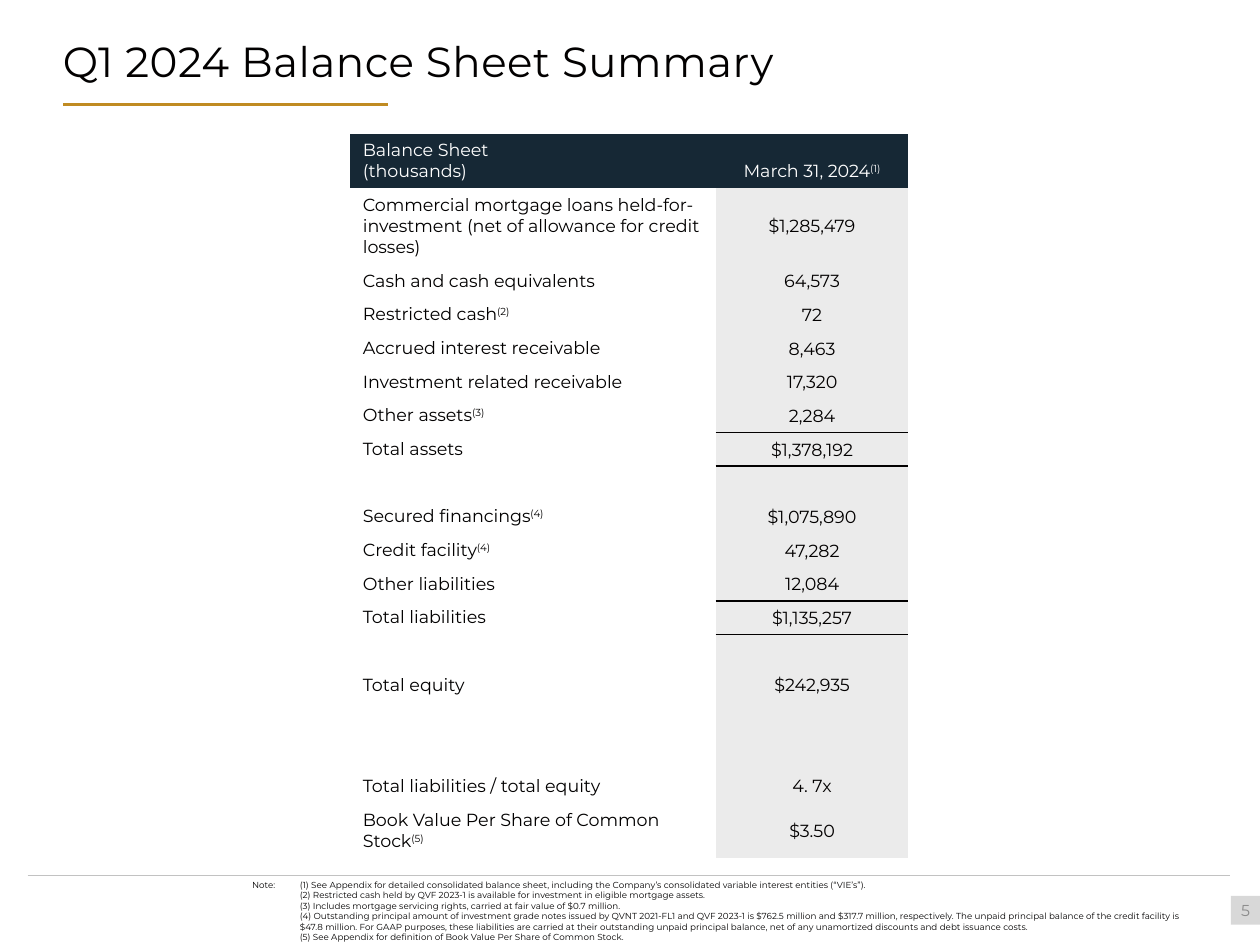
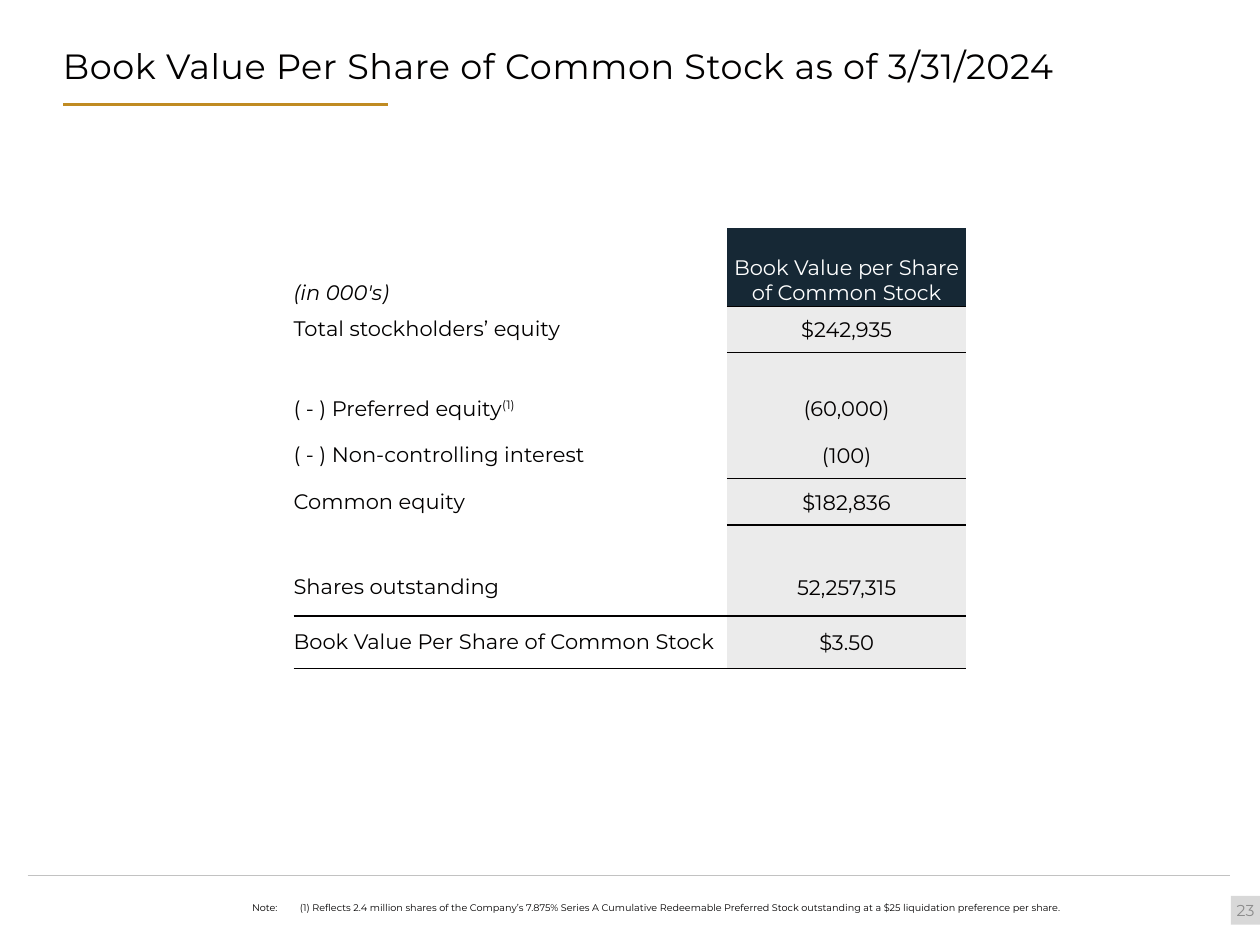
from lxml import etree
from pptx import Presentation
from pptx import util as u
from pptx.dml.color import RGBColor
from pptx.enum import shapes, text
from pptx.oxml.ns import qn

# Shared look
FONT = "Montserrat"
INK, WHITE, NAVY, PALE = "020000", "FFFFFF", "162835", "EBEBEB"
GOLD, RULE, BADGE, GREY = "C08B22", "C2C2C2", "D8D8D8", "8C8C8C"
NO_STYLE = "{2D5ABB26-0587-4C30-8999-92F81FD0307C}"
WIDE, HIGH = 10, 7.5
TOP, MID, LOW = (text.MSO_ANCHOR.TOP, text.MSO_ANCHOR.MIDDLE,
                 text.MSO_ANCHOR.BOTTOM)
FLUSH, SNUG, ROOMY = (0, 0, 0, 0), (.01, .01, .01, 0), (.1, .05, .1, .05)

# Content: ^ starts a raised note mark; a row is label, value, ruled columns
# (0 none, 1 value only, 2 both), and height
SHEET = [
    ("Balance Sheet\n(thousands)", "March 31, 2024^(1)", 0, .36),
    ("Commercial mortgage loans held-for-investment (net of allowance "
     "for credit losses)", "$1,285,479", 0, .51),
    ("Cash and cash equivalents", "64,573", 0, .22),
    ("Restricted cash^(2)", "72", 0, .22),
    ("Accrued interest receivable", "8,463", 0, .22),
    ("Investment related receivable", "17,320", 0, .22),
    ("Other assets^(3)", "2,284", 1, .22),
    ("Total assets", "$1,378,192", 0, .22),
    ("", "", 0, .22),
    ("Secured financings^(4)", "$1,075,890", 0, .22),
    ("Credit facility^(4)", "47,282", 0, .22),
    ("Other liabilities", "12,084", 1, .22),
    ("Total liabilities", "$1,135,257", 0, .22),
    ("", "", 0, .22),
    ("Total equity", "$242,935", 0, .22),
    ("", "", 0, .22),
    ("", "", 0, .22),
    ("Total liabilities / total equity", "4. 7x", 0, .22),
    ("Book Value Per Share of Common Stock^(5)", "$3.50", 0, .36),
]
BOOK = [
    ("(in 000's)", "Book Value per Share of Common Stock", 1, .62),
    ("Total stockholders’ equity", "$242,935", 0, .37),
    ("", "", 0, .26),
    ("( - ) Preferred equity^(1)", "(60,000)", 0, .37),
    ("( - ) Non-controlling interest", "(100)", 1, .37),
    ("Common equity", "$182,836", 0, .37),
    ("", "", 0, .26),
    ("Shares outstanding", "52,257,315", 2, .46),
    ("Book Value Per Share of Common Stock", "$3.50", 2, .42),
]
SLIDES = [
    dict(title="Q1 2024 Balance Sheet Summary", size=24, page="5",
         rows=SHEET, at=(2.78, 1.06), cols=(2.9, 1.53), pt=10,
         pad=ROOMY, anchor=TOP, band=True, note_top=6.98, note_pt=5,
         notes=[
             "(1) See Appendix for detailed consolidated balance sheet, "
             "including the Company’s consolidated variable interest "
             "entities (“VIE’s”).",
             "(2) Restricted cash held by QVF 2023-1 is available for "
             "investment in eligible mortgage assets.",
             "(3) Includes mortgage servicing rights, carried at fair value "
             "of $0.7 million.",
             "(4) Outstanding principal amount of investment grade notes "
             "issued by QVNT 2021-FL1 and QVF 2023-1 is $762.5 million and "
             "$317.7 million, respectively. The unpaid principal balance of "
             "the credit facility is $47.8 million. For GAAP purposes, these "
             "liabilities are carried at their outstanding unpaid principal "
             "balance, net of any unamortized discounts and debt issuance "
             "costs.",
             "(5) See Appendix for definition of Book Value Per Share of "
             "Common Stock."]),
    dict(title="Book Value Per Share of Common Stock as of 3/31/2024",
         size=20, page="23", rows=BOOK, at=(2.33, 1.81), cols=(3.44, 1.9),
         pt=12, pad=FLUSH, anchor=MID, band=False, note_top=7.16,
         note_pt=5.5, notes=[
             "(1) Reflects 2.4 million shares of the Company’s 7.875% "
             "Series A Cumulative Redeemable Preferred Stock outstanding at "
             "a $25 liquidation preference per share."]),
]


def tint(code):
    return RGBColor.from_string(code)


def sub(node, tag, **attrs):
    return etree.SubElement(node, qn(tag), attrs)


def style(para, pt, color, center=False):
    para.font.name, para.font.size = FONT, u.Pt(pt)
    para.font.color.rgb = tint(color)
    if center:
        para.alignment = text.PP_ALIGN.CENTER


def inset(item, pad):
    (item.margin_left, item.margin_top,
     item.margin_right, item.margin_bottom) = map(u.Inches, pad)


def box(slide, left, top, width, height, pad):
    frame = slide.shapes.add_textbox(
        *map(u.Inches, (left, top, width, height))).text_frame
    frame.word_wrap = True
    inset(frame, pad)
    return frame


def line(slide, left, right, y, color, pt):
    rule = slide.shapes.add_connector(
        shapes.MSO_CONNECTOR.STRAIGHT,
        *map(u.Inches, (left, y, right, y)))
    rule.line.color.rgb, rule.line.width = tint(color), u.Pt(pt)
    sub(rule._element.spPr, "a:effectLst")


def frame_up(slide, data):
    """Rules, title and page badge."""
    line(slide, .22, 9.76, 6.95, RULE, .5)
    line(slide, .5, 3.08, .83, GOLD, 1.5)
    para = box(slide, .5, .22, 9.27, .6, (0, .05, .1, .05)).paragraphs[0]
    run = para.add_run()
    run.text = data["title"]
    run._r.get_or_add_rPr().set("spc", "30")
    para.line_spacing = u.Pt(30)
    style(para, data["size"], INK)

    side = .23
    badge = slide.shapes.add_shape(
        shapes.MSO_SHAPE.RECTANGLE,
        *map(u.Inches, (WIDE - side, 7.11, side, side)))
    badge.shadow.inherit = False
    badge.fill.solid()
    badge.fill.fore_color.rgb = tint(BADGE)
    badge.line.fill.background()
    frame = badge.text_frame
    inset(frame, FLUSH)
    frame.word_wrap, frame.vertical_anchor = False, MID
    frame.text = data["page"]
    style(frame.paragraphs[0], 9, GREY, True)


def fill_cell(cell, words, pt, color, back, center):
    if back:
        cell.fill.solid()
        cell.fill.fore_color.rgb = tint(back)
    else:
        cell.fill.background()
    frame = cell.text_frame
    for i, part in enumerate(words.split("\n")):
        para = frame.add_paragraph() if i else frame.paragraphs[0]
        main, _, mark = part.partition("^")
        if main:
            para.add_run().text = main
        else:
            sub(para._p, "a:endParaRPr", sz=str(pt * 100))
        if mark:
            run = para.add_run()
            run.text = mark
            run._r.get_or_add_rPr().set("baseline", "30000")
        style(para, pt, color, center)


def edge(cell, side, pt):
    props = cell._tc.get_or_add_tcPr()
    node = sub(props, "a:ln" + side, w=str(u.Pt(pt)))
    sub(sub(node, "a:solidFill"), "a:srgbClr", val=INK)
    props.insert(0, node)


def grid(slide, data):
    rows, cols, pt = data["rows"], data["cols"], data["pt"]
    size = (sum(cols), sum(row[3] for row in rows))
    table = slide.shapes.add_table(
        len(rows), len(cols), *map(u.Inches, data["at"] + size)).table
    table.first_row = table.horz_banding = False
    table._tbl.tblPr.find(qn("a:tableStyleId")).text = NO_STYLE
    for col, width in zip(table.columns, cols):
        col.width = u.Inches(width)
    for r, (label, value, _, height) in enumerate(rows):
        table.rows[r].height = u.Inches(height)
        left, right = table.cell(r, 0), table.cell(r, 1)
        head = r == 0
        band = head and data["band"]
        fill_cell(left, label, pt, WHITE if band else INK,
                  NAVY if band else None, False)
        fill_cell(right, value, pt, WHITE if head else INK,
                  NAVY if head else PALE, True)
        inset(left, data["pad"])
        inset(right, data["pad"] if head else SNUG)
        left.vertical_anchor = LOW if head else data["anchor"]
        right.vertical_anchor = LOW if head else MID
        if head and not data["band"]:
            left.text_frame.paragraphs[0].font.italic = True

    # Bottom up, so that top edges come before bottom edges in each cell
    for r in reversed(range(len(rows))):
        for c in range(len(cols) - rows[r][2], len(cols)):
            pt = 1 if r else .5
            edge(table.cell(r, c), "B", pt)
            if r + 1 < len(rows):
                edge(table.cell(r + 1, c), "T", pt)


def notes(slide, data):
    frame = box(slide, 2, data["note_top"], 7.51, HIGH - data["note_top"],
                FLUSH)
    hang = u.Inches(.38)
    for i, note in enumerate(data["notes"]):
        para = frame.add_paragraph() if i else frame.paragraphs[0]
        props = para._p.get_or_add_pPr()
        props.set("marL", str(hang))
        props.set("indent", str(-hang))
        sub(sub(props, "a:tabLst"), "a:tab", pos=str(hang), algn="l")
        para.add_run().text = ("\t" if i else "Note: \t") + note
        style(para, data["note_pt"], INK)


def main():
    deck = Presentation()
    deck.slide_width, deck.slide_height = u.Inches(WIDE), u.Inches(HIGH)
    for data in SLIDES:
        slide = deck.slides.add_slide(deck.slide_layouts[6])
        frame_up(slide, data)
        grid(slide, data)
        notes(slide, data)
    deck.save("out.pptx")


if __name__ == "__main__":
    main()
